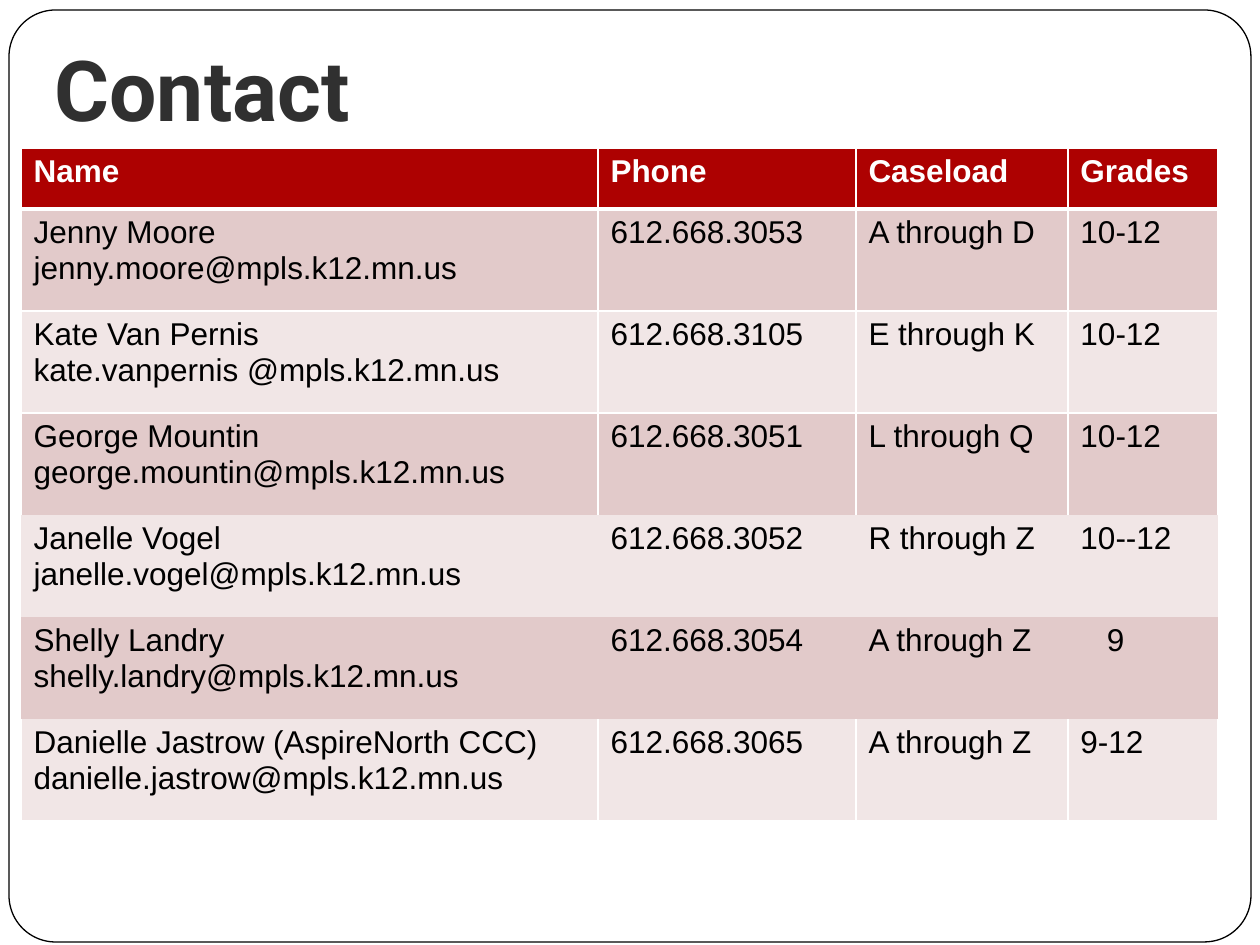
from lxml import etree
from pptx import Presentation
from pptx.dml.color import RGBColor
from pptx.enum.shapes import MSO_SHAPE
from pptx.enum.text import MSO_ANCHOR, MSO_AUTO_SIZE, PP_ALIGN
from pptx.oxml.ns import qn
from pptx.util import Pt

ROUND = MSO_SHAPE.ROUNDED_RECTANGLE
BOTTOM = MSO_ANCHOR.BOTTOM
FIXED = MSO_AUTO_SIZE.NONE
LEFT = PP_ALIGN.LEFT

WHITE = RGBColor(0xFF, 0xFF, 0xFF)
BLACK = RGBColor(0, 0, 0)
GREY = RGBColor(0x30, 0x30, 0x30)
RED = RGBColor(0xAD, 0x01, 0x01)
ROSE = RGBColor(0xE2, 0xCA, 0xCA)
PALE = RGBColor(0xF1, 0xE6, 0xE6)

SCALE = 914400 / 126
COLS = [577, 258, 212, 150]
HEAD = 61
ROW = 102
PAD = 13
SHIFT = 26

ROWS = [
    ["Name", "Phone", "Caseload", "Grades"],
    ["Jenny Moore\njenny.moore@mpls.k12.mn.us",
     "612.668.3053", "A through D", "10-12"],
    ["Kate Van Pernis\nkate.vanpernis @mpls.k12.mn.us",
     "612.668.3105", "E through K", "10-12"],
    ["George Mountin\ngeorge.mountin@mpls.k12.mn.us",
     "612.668.3051", "L through Q", "10-12"],
    ["Janelle Vogel\njanelle.vogel@mpls.k12.mn.us",
     "612.668.3052", "R through Z", "10--12"],
    ["Shelly Landry\nshelly.landry@mpls.k12.mn.us",
     "612.668.3054", "A through Z", "9"],
    ["Danielle Jastrow (AspireNorth CCC)\ndanielle.jastrow@mpls.k12.mn.us",
     "612.668.3065", "A through Z", "9-12"],
]
GRID = {"L": 1, "R": 1, "T": 1, "B": 1}
EDGES = [
    {**GRID, "B": 3},
    {**GRID, "T": 3},
    GRID,
    {**GRID, "B": 0},
    {},
    {},
    {**GRID, "T": 0},
]


def px(num):
    return round(num * SCALE)


def place(shape, left, top, width, height):
    shape.left, shape.top = px(left), px(top)
    shape.width, shape.height = px(width), px(height)


def add_run(para, text, name, size, color, bold):
    run = para.add_run()
    run.text = text
    font = run.font
    font.name, font.size, font.bold = name, Pt(size), bold
    font.color.rgb = color


def add_title(slide, text):
    title = slide.shapes.title
    place(title, 42, 21, 1071, 130)
    frame = title.text_frame
    frame.auto_size = FIXED
    frame.word_wrap = True
    frame.vertical_anchor = BOTTOM
    frame.margin_bottom = px(PAD)
    para = frame.paragraphs[0]
    para.alignment = LEFT
    add_run(para, text, "Roboto", 48, GREY, True)
    return title


def add_panel(slide, title):
    panel = slide.shapes.add_shape(ROUND, px(9), px(10), px(1242), px(932))
    panel.adjustments[0] = 0.05
    panel.shadow.inherit = False
    panel.fill.solid()
    panel.fill.fore_color.rgb = WHITE
    panel.line.color.rgb = BLACK
    panel.line.width = Pt(0.75)
    title.element.addprevious(panel.element)


def set_edges(cell, edges):
    props = cell._tc.get_or_add_tcPr()
    for side in "LRTB":
        size = edges.get(side, 0)
        line = etree.SubElement(props, qn(f"a:ln{side}"), w=str(Pt(size)))
        if size:
            fill = etree.SubElement(line, qn("a:solidFill"))
            etree.SubElement(fill, qn("a:srgbClr"), val=str(WHITE))
        else:
            etree.SubElement(line, qn("a:noFill"))


def fill_cell(cell, text, back, color, bold, edges):
    set_edges(cell, edges)
    cell.fill.solid()
    cell.fill.fore_color.rgb = back
    if text == "9":
        cell.margin_left = px(PAD + SHIFT)
    frame = cell.text_frame
    for num, line in enumerate(text.split("\n")):
        para = frame.add_paragraph() if num else frame.paragraphs[0]
        add_run(para, line, "Arial", 18, color, bold)


def add_grid(slide):
    high = HEAD + ROW * (len(ROWS) - 1)
    table = slide.shapes.add_table(
        len(ROWS), len(COLS), px(21), px(148), px(sum(COLS)), px(high)).table
    for col, width in zip(table.columns, COLS):
        col.width = px(width)
    for num, texts in enumerate(ROWS):
        head = num == 0
        table.rows[num].height = px(HEAD if head else ROW)
        back = RED if head else (PALE, ROSE)[num % 2]
        color = WHITE if head else BLACK
        for cell, text in zip(table.rows[num].cells, texts):
            fill_cell(cell, text, back, color, head, EDGES[num])


def main():
    deck = Presentation()
    deck.slide_width, deck.slide_height = px(1260), px(945)
    slide = deck.slides.add_slide(deck.slide_layouts[5])
    title = add_title(slide, "Contact")
    add_panel(slide, title)
    add_grid(slide)
    deck.save("out.pptx")


if __name__ == "__main__":
    main()
